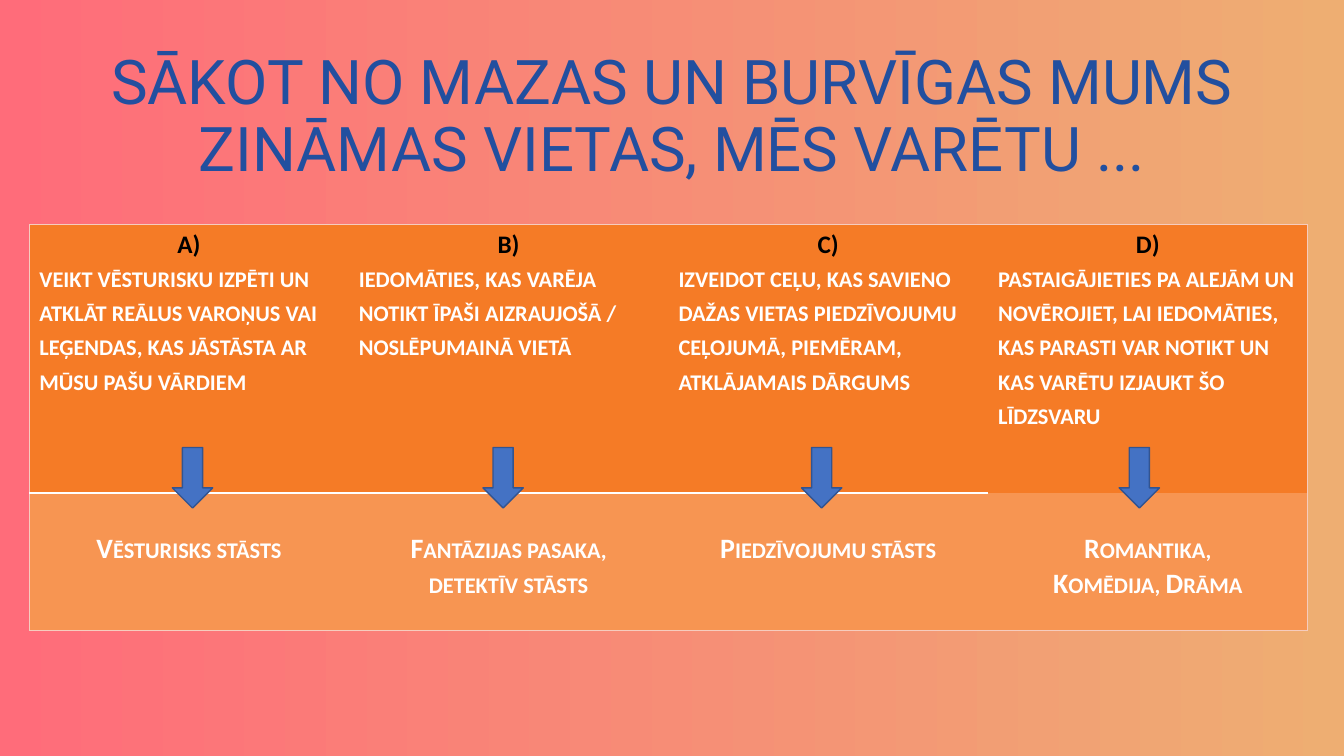
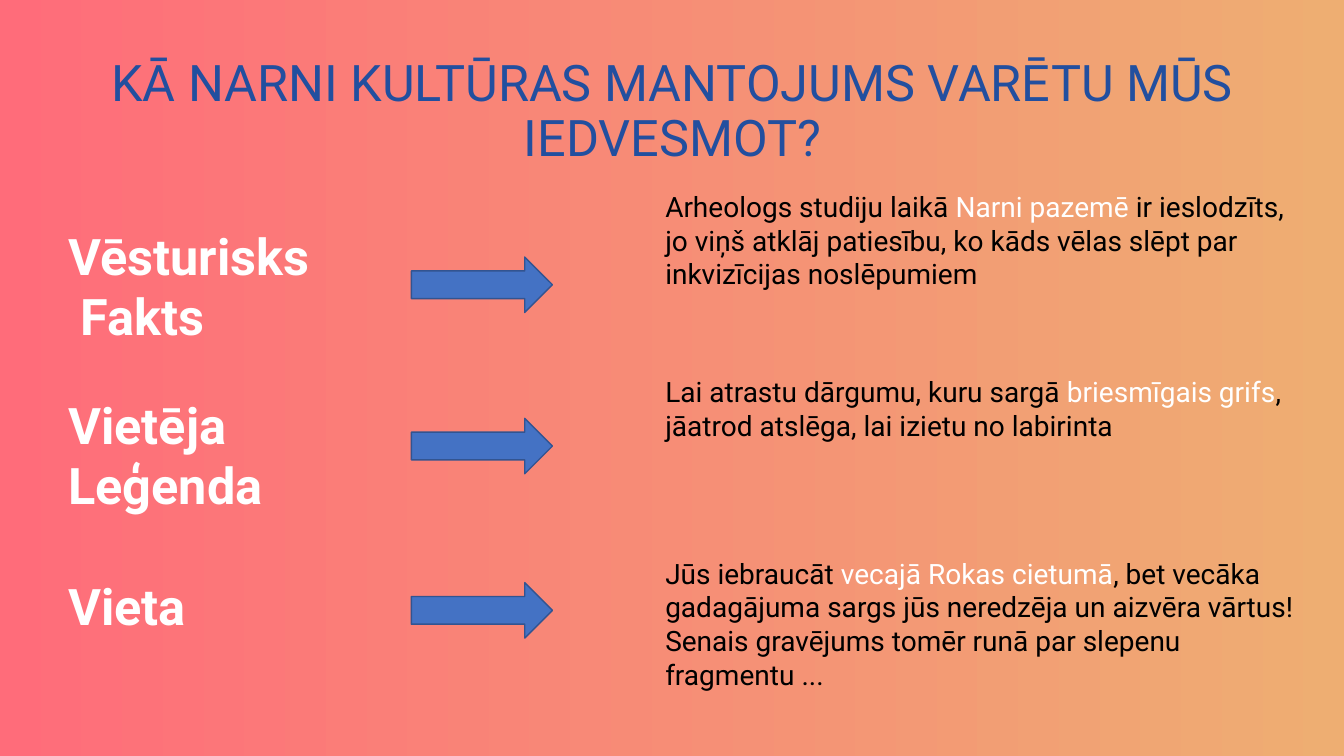
from dataclasses import dataclass

from lxml import etree
from pptx import Presentation
from pptx.dml.color import RGBColor
from pptx.enum.shapes import MSO_SHAPE
from pptx.enum.text import MSO_ANCHOR, PP_ALIGN
from pptx.oxml.ns import qn
from pptx.util import Inches, Pt

DOWN, RIGHT = MSO_SHAPE.DOWN_ARROW, MSO_SHAPE.RIGHT_ARROW
TOP, MIDDLE = MSO_ANCHOR.TOP, MSO_ANCHOR.MIDDLE
LEFT, CENTER = PP_ALIGN.LEFT, PP_ALIGN.CENTER
NO_TABLE_STYLE = "{2D5ABB26-0587-4C30-8999-92F81FD0307C}"


@dataclass(frozen=True)
class Theme:
    pink: str = "FF6C7A"
    sand: str = "EEAE72"
    title: str = "224F9F"
    black: str = "000000"
    white: str = "FFFFFF"
    arrow: str = "4472C4"
    arrow_line: str = "325491"
    head_fill: str = "F57B26"
    genre_fill: str = "F79552"
    frame: str = "F6CCBE"
    font: str = "Roboto"
    table_font: str = "Calibri"
    title_size: int = 44
    label_size: int = 36
    body_size: int = 20
    letter_size: int = 18


T = Theme()


def write(tf, *parts, size=T.body_size, color=T.black, accent=T.white, font=T.font,
          bold=False, align=LEFT, spacing=None, small_caps=False, indent=0):
    p = tf.paragraphs[0]
    if p.runs:
        p = tf.add_paragraph()
    p.alignment = align
    if spacing:
        p.line_spacing = spacing
    if indent:
        p._p.get_or_add_pPr().set("marL", str(Inches(indent)))
    for i, text in enumerate(parts):
        r = p.add_run()
        r.text = text
        r.font.name, r.font.size, r.font.bold = font, Pt(size), bold
        r.font.color.rgb = RGBColor.from_string(accent if i % 2 else color)
        if small_caps:
            r.font._element.set("cap", "small")


def add_box(s, x, y, w, h, anchor=TOP):
    tf = s.shapes.add_textbox(Inches(x), Inches(y), Inches(w), Inches(h)).text_frame
    tf.word_wrap = True
    tf.vertical_anchor = anchor
    return tf


prs = Presentation()
prs.slide_width, prs.slide_height = Inches(13.33), Inches(7.5)

letters = ["A)", "B)", "C)", "D)"]
tasks = [
    "veikt vēsturisku izpēti un atklāt reālus varoņus vai leģendas, kas jāstāsta ar mūsu pašu vārdiem",
    "iedomāties, kas varēja notikt īpaši aizraujošā / noslēpumainā vietā",
    "izveidot ceļu, kas savieno dažas vietas piedzīvojumu ceļojumā, piemēram, atklājamais dārgums",
    "pastaigājieties pa alejām un novērojiet, lai iedomāties, kas parasti var notikt un kas varētu izjaukt šo līdzsvaru",
]
genres = [
    ["Vēsturisks stāsts"],
    ["Fantāzijas pasaka,", "detektīv stāsts"],
    ["Piedzīvojumu stāsts"],
    ["Romantika,", "Komēdija, Drāma"],
]
labels = [
    (2.18, 1.31, [("Vēsturisks", 0), ("Fakts", 0.12)]),
    (3.86, 1.31, [("Vietēja", 0), ("Leģenda", 0)]),
    (5.66, 0.71, [("Vieta", 0)]),
]
ideas = [
    (1.83, 1.11, ["Arheologs studiju laikā ", "Narni pazemē ",
                  "ir ieslodzīts, jo viņš atklāj patiesību, ko kāds vēlas slēpt par inkvizīcijas noslēpumiem"]),
    (3.67, 0.77, ["Lai atrastu dārgumu, kuru sargā ", "briesmīgais grifs",
                  ", jāatrod atslēga, lai izietu no labirinta"]),
    (5.47, 1.45, ["Jūs iebraucāt ", "vecajā Rokas cietumā",
                  ", bet vecāka gadagājuma sargs jūs neredzēja un aizvēra vārtus! "
                  "Senais gravējums tomēr runā par slepenu fragmentu ..."]),
]
pages = [
    ("SĀKOT NO MAZAS UN BURVĪGAS MUMS ZINĀMAS VIETAS, MĒS VARĒTU ...", T.title_size, 0.45,
     DOWN, [(x, 4.44) for x in (1.71, 4.79, 7.95, 11.1)], (0.4, 0.6)),
    ("KĀ NARNI KULTŪRAS MANTOJUMS VARĒTU MŪS IEDVESMOT?", T.label_size, 0.4,
     RIGHT, [(4.08, y) for y in (2.55, 4.15, 5.78)], (1.4, 0.55)),
]

for number, (title, size, top, arrow, spots, (w, h)) in enumerate(pages):
    s = prs.slides.add_slide(prs.slide_layouts[6])
    bg = s.background.fill
    bg.gradient()
    bg.gradient_angle = 0
    for stop, color in zip(bg.gradient_stops, (T.pink, T.sand)):
        stop.color.rgb = RGBColor.from_string(color)

    tf = add_box(s, 0.92, top, 11.5, 1.44, MIDDLE)
    write(tf, title, size=size, color=T.title, align=CENTER, spacing=0.9)

    if number == 0:
        frame = s.shapes.add_table(2, 4, Inches(0.29), Inches(2.23), Inches(12.68), Inches(4.02))
        table = frame.table
        table.first_row = table.horz_banding = False
        table._tbl.tblPr.find(qn("a:tableStyleId")).text = NO_TABLE_STYLE
        for row, height in zip(table.rows, (2.66, 1.36)):
            row.height = Inches(height)
        for i, col in enumerate(table.columns):
            col.width = Inches(3.17)
            head, genre = table.cell(0, i), table.cell(1, i)
            write(head.text_frame, letters[i], size=T.letter_size, font=T.table_font,
                  bold=True, align=CENTER)
            write(head.text_frame, tasks[i], color=T.white, font=T.table_font,
                  bold=True, small_caps=True)
            genre.margin_top = Inches(0.39)
            for line in genres[i]:
                write(genre.text_frame, line, color=T.white, font=T.table_font,
                      bold=True, align=CENTER, small_caps=True)
            for j, (cell, fill) in enumerate([(head, T.head_fill), (genre, T.genre_fill)]):
                edges = [("lnL", i == 0, T.frame, 0.5), ("lnR", i == 3, T.frame, 0.5),
                         ("lnT", j == 0, T.frame, 0.5), ("lnB", j == 1, T.frame, 0.5),
                         ("lnB", j == 0 and i < 3, T.white, 1.5)]
                for tag, shown, color, width in edges:
                    if shown:
                        ln = etree.SubElement(cell._tc.get_or_add_tcPr(), qn("a:" + tag), w=str(Pt(width)))
                        solid = etree.SubElement(ln, qn("a:solidFill"))
                        etree.SubElement(solid, qn("a:srgbClr"), val=color)
                cell.fill.solid()
                cell.fill.fore_color.rgb = RGBColor.from_string(fill)
    else:
        for y, height, lines in labels:
            tf = add_box(s, 0.58, y, 4.19, height)
            for text, indent in lines:
                write(tf, text, size=T.label_size, color=T.white, bold=True, indent=indent)
        for y, height, parts in ideas:
            write(add_box(s, 6.5, y, 6.56, height), *parts)

    for x, y in spots:
        sp = s.shapes.add_shape(arrow, Inches(x), Inches(y), Inches(w), Inches(h))
        sp.shadow.inherit = False
        sp.fill.solid()
        sp.fill.fore_color.rgb = RGBColor.from_string(T.arrow)
        sp.line.color.rgb = RGBColor.from_string(T.arrow_line)
        sp.line.width = Pt(1)

prs.save("out.pptx")
